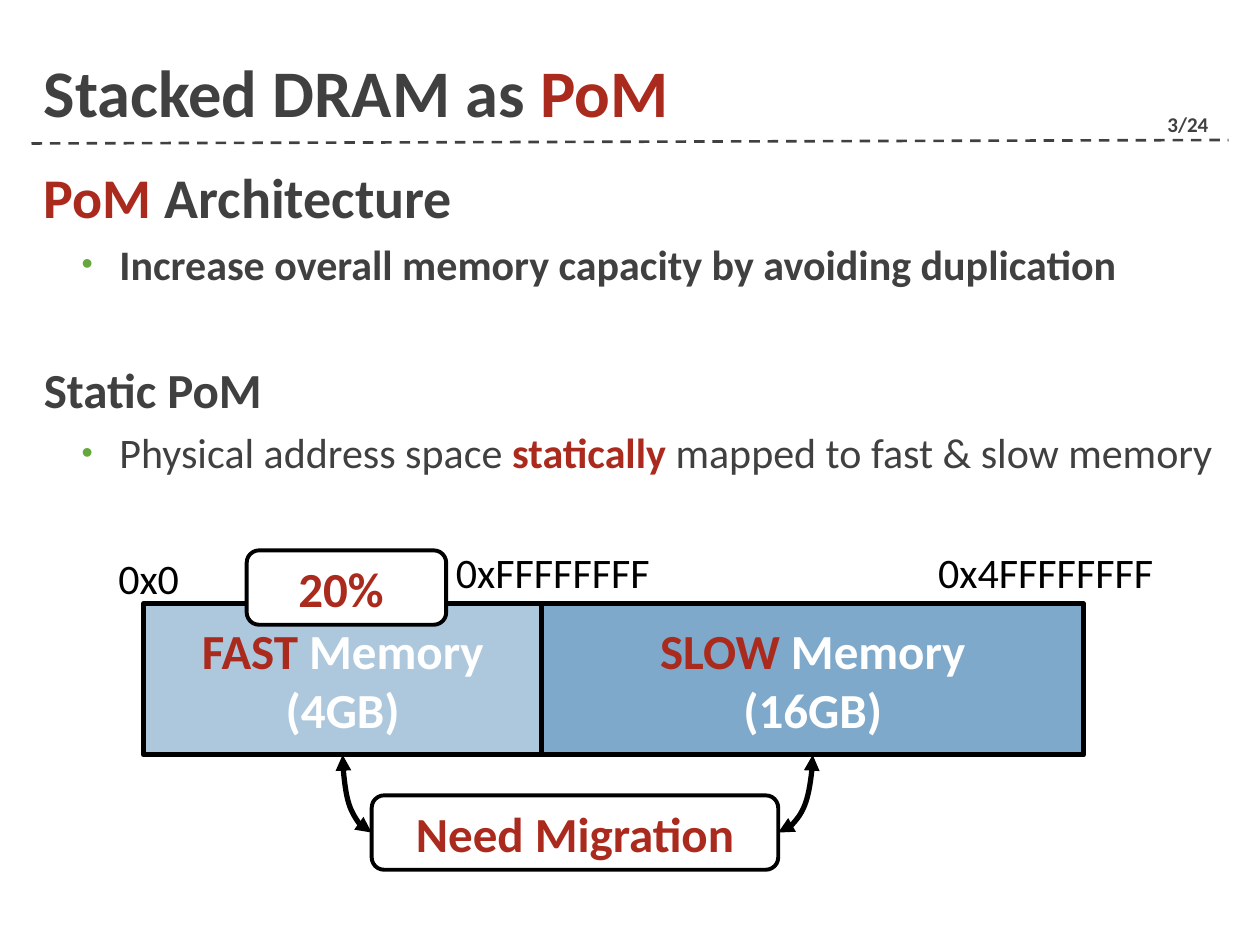
from lxml import etree
from pptx import Presentation
from pptx.dml.color import RGBColor
from pptx.enum.dml import MSO_LINE
from pptx.enum.shapes import MSO_CONNECTOR as CONN, MSO_SHAPE as SHAPE
from pptx.enum.text import MSO_ANCHOR as ANCHOR, PP_ALIGN as ALIGN
from pptx.oxml.ns import qn
from pptx.util import Pt

COLORS = {
    "text": "404040", "accent": "AA2B1E", "bullet": "64A73B", "black": "000000",
    "white": "FFFFFF", "fast": "ADC8DD", "slow": "7EA9CA",
}


def rgb(name):
    return RGBColor.from_string(COLORS[name])


class SlideBuilder:
    font = "Calibri"

    def __init__(self, slide):
        self.shapes = slide.shapes

    def paragraph(self, p, runs, size, bold=True):
        """Fill p with (text, colour[, bold]) runs."""
        for text, color, *weight in runs:
            r = p.add_run()
            r.text = text
            r.font.name, r.font.size = self.font, Pt(size)
            r.font.bold = weight[0] if weight else bold
            r.font.color.rgb = rgb(color)

    def bullet(self, p):
        p.level = 1
        pPr = p._p.get_or_add_pPr()
        pPr.set("marL", str(Pt(43.2)))
        pPr.set("indent", str(-Pt(21.6)))
        clr = etree.SubElement(pPr, qn("a:buClr"))
        etree.SubElement(clr, qn("a:srgbClr"), val=COLORS["bullet"])
        etree.SubElement(pPr, qn("a:buSzPct"), val="76000")
        etree.SubElement(pPr, qn("a:buFont"), typeface="Arial")
        etree.SubElement(pPr, qn("a:buChar"), char="•")

    def text(self, x, y, w, h, runs=(), size=24, bold=True, wrap=False, anchor=ANCHOR.TOP):
        tf = self.shapes.add_textbox(Pt(x), Pt(y), Pt(w), Pt(h)).text_frame
        tf.word_wrap, tf.vertical_anchor = wrap, anchor
        self.paragraph(tf.paragraphs[0], runs, size, bold)
        return tf

    def outline(self, x, y, w, h, items):
        """Headings and bullets as (runs, size, space before, is bullet)."""
        tf = self.text(x, y, w, h, wrap=True)
        for i, (runs, size, before, is_bullet) in enumerate(items):
            p = tf.add_paragraph() if i else tf.paragraphs[0]
            p.space_before = Pt(before)
            if is_bullet:
                self.bullet(p)
            self.paragraph(p, runs, size)

    def box(self, kind, x, y, w, h, fill, weight, lines):
        sp = self.shapes.add_shape(kind, Pt(x), Pt(y), Pt(w), Pt(h))
        sp.shadow.inherit = False
        sp.fill.solid()
        sp.fill.fore_color.rgb = rgb(fill)
        sp.line.color.rgb, sp.line.width = rgb("black"), Pt(weight)
        tf = sp.text_frame
        tf.word_wrap, tf.vertical_anchor = True, ANCHOR.MIDDLE
        for i, runs in enumerate(lines):
            p = tf.add_paragraph() if i else tf.paragraphs[0]
            p.alignment = ALIGN.CENTER
            self.paragraph(p, runs, 28)
        return sp

    def line(self, kind, start, end, color, weight):
        cx = self.shapes.add_connector(kind, *start, *end)
        cx.line.color.rgb, cx.line.width = rgb(color), Pt(weight)
        etree.SubElement(cx._element.spPr, qn("a:effectLst"))
        return cx

    def dashed_rule(self, x1, y1, x2, y2):
        cx = self.line(CONN.STRAIGHT, (Pt(x1), Pt(y1)), (Pt(x2), Pt(y2)), "text", 1.5)
        cx.line.dash_style = MSO_LINE.DASH

    def curved_arrow(self, start, end):
        cx = self.line(CONN.CURVE, start, end, "black", 3)
        cx._element.spPr.find(qn("a:prstGeom")).set("prst", "curvedConnector2")
        for tag in ("a:headEnd", "a:tailEnd"):
            etree.SubElement(cx.line._get_or_add_ln(), qn(tag), type="triangle")


def main():
    prs = Presentation()
    prs.slide_width, prs.slide_height = Pt(720), Pt(540)
    s = SlideBuilder(prs.slides.add_slide(prs.slide_layouts[6]))

    # Header
    s.text(660, 60, 48, 18, [("3/24", "text")], size=12)
    s.dashed_rule(18, 82, 702, 80)

    # Body; the second heading sits one 24 pt line lower
    s.outline(18, 89.3, 684, 408, [
        ([("PoM ", "accent"), ("Architecture", "text")], 32, 6, False),
        ([("Increase overall memory capacity by avoiding duplication", "text")], 24, 5, True),
        ([("Static PoM", "text")], 28, 40.3, False),
        ([("Physical address space ", "text", False), ("statically", "accent"),
          (" mapped to fast & slow memory", "text", False)], 24, 5, True),
    ])
    s.text(18, 12.2, 666, 66.2, [("Stacked DRAM as ", "text"), ("PoM", "accent")],
           size=38, wrap=True, anchor=ANCHOR.BOTTOM)

    # Memory bar
    top, height, split = 345, 86.4, 309.6
    slow, fast = [
        s.box(SHAPE.RECTANGLE, x, top, w, height, fill, 3,
              [[(name, "accent"), (" Memory", "white")], [(size, "white")]])
        for x, w, fill, name, size in (
            (split, 309.6, "slow", "SLOW", "(16GB)"),
            (split - 227.5, 227.5, "fast", "FAST", "(4GB)"))
    ]

    # Address labels
    for x, y, w, address in ((60.5, 312, 59, "0x0"), (253.5, 309, 141, "0xFFFFFFFF"),
                             (529, 309, 146, "0x4FFFFFFFF")):
        s.text(x, y, w, 36, [(address, "black")], bold=False)

    # Migration callout, with an arrow to each memory
    note = s.box(SHAPE.ROUNDED_RECTANGLE, 212.4, 454.5, 232.3, 42.5, "white", 2.25,
                 [[("Need Migration", "accent")]])
    middle = note.top + note.height // 2
    for edge, memory in ((note.left + note.width, slow), (note.left, fast)):
        s.curved_arrow((edge, middle),
                       (memory.left + memory.width // 2, memory.top + memory.height))

    # Share of fast memory
    s.box(SHAPE.ROUNDED_RECTANGLE, 141, 314.5, 114, 42.5, "white", 2.25,
          [[("20% ", "accent")]])

    prs.save("out.pptx")


if __name__ == "__main__":
    main()
